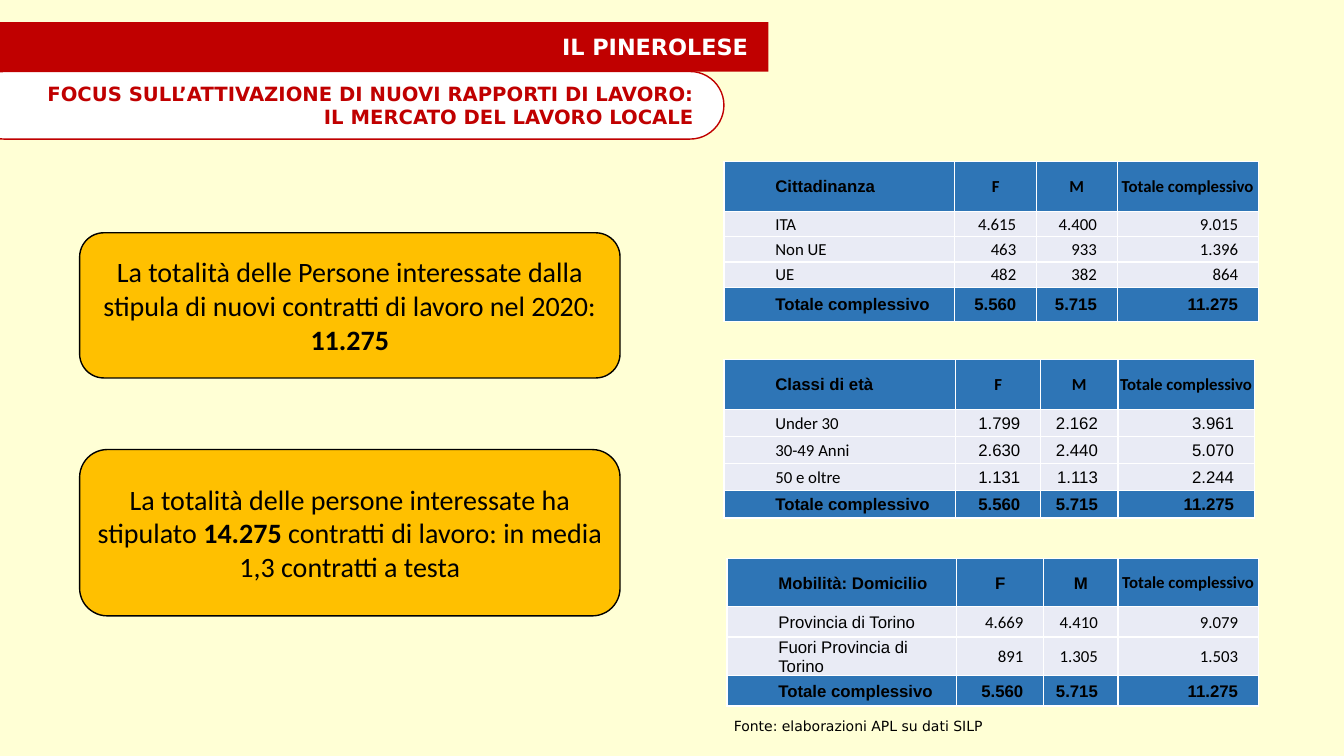
from lxml.etree import SubElement
from pptx import Presentation
from pptx.dml.color import RGBColor
from pptx.enum.shapes import MSO_SHAPE
from pptx.enum.text import MSO_ANCHOR, MSO_AUTO_SIZE, PP_ALIGN
from pptx.oxml import parse_xml
from pptx.oxml.ns import nsdecls, qn
from pptx.util import Inches, Pt

RED, WHITE, BLACK = "C00000", "FFFFFF", "000000"
AMBER, BLUE, PALE, CREAM = "FFC000", "2E75B6", "E9EBF5", "FFFFD5"
HEADING_FONT, BODY_FONT, TABLE_FONT = "DejaVu Sans", "Calibri", "Arial"


def color(value):
    return RGBColor.from_string(value)


class SlideBuilder:
    bar_margins = (0, 0, 0.2, 0)
    box_margins = (0.1, 0.05, 0.1, 0.05)
    label_margins = (0.01, 0.01, 0.01, 0)
    number_margins = (0.01, 0.01, 0.2, 0)

    def __init__(self, presentation):
        self.slide = presentation.slides.add_slide(presentation.slide_layouts[5])
        fill = self.slide.background.fill
        fill.solid()
        fill.fore_color.rgb = color(CREAM)

    def place(self, shape, position):
        for name, length in zip(("left", "top", "width", "height"), position):
            setattr(shape, name, Inches(length))

    def paint(self, shape, fill, line=None):
        shape.fill.solid()
        shape.fill.fore_color.rgb = color(fill)
        if line:
            shape.line.color.rgb = color(line)
            shape.line.width = Pt(1)
        else:
            shape.line.fill.background()

    def frame(self, text_frame, margins, anchor=MSO_ANCHOR.MIDDLE):
        left, top, right, bottom = map(Inches, margins)
        settings = {
            "word_wrap": True, "auto_size": MSO_AUTO_SIZE.NONE,
            "vertical_anchor": anchor, "margin_left": left, "margin_top": top,
            "margin_right": right, "margin_bottom": bottom,
        }
        for name, value in settings.items():
            setattr(text_frame, name, value)

    def add_text(self, paragraph, runs, alignment, font, size, ink=BLACK):
        """Fill a paragraph with (text, bold) runs."""
        paragraph.alignment = alignment
        for text, bold in runs:
            run = paragraph.add_run()
            run.text = text
            for name, value in {"name": font, "size": Pt(size), "bold": bold}.items():
                setattr(run.font, name, value)
            run.font.color.rgb = color(ink)

    def title(self, text, position):
        shape = self.slide.shapes.title
        self.place(shape, position)
        shape.element.spPr.insert(1, parse_xml(
            f'<a:prstGeom {nsdecls("a")} prst="roundRect"><a:avLst>'
            '<a:gd name="adj" fmla="val 50000"/></a:avLst></a:prstGeom>'))
        self.paint(shape, RED)
        self.frame(shape.text_frame, self.bar_margins)
        self.add_text(shape.text_frame.paragraphs[0], [(text, True)],
                      PP_ALIGN.RIGHT, HEADING_FONT, 16, WHITE)

    def rounded(self, position, fill, line, margins, rounding=None):
        shape = self.slide.shapes.add_shape(
            MSO_SHAPE.ROUNDED_RECTANGLE, *map(Inches, position))
        shape.shadow.inherit = False
        if rounding is not None:
            shape.adjustments[0] = rounding
        self.paint(shape, fill, line)
        self.frame(shape.text_frame, margins)
        return shape.text_frame

    def subtitle(self, lines, position):
        text_frame = self.rounded(position, WHITE, RED, self.bar_margins, 0.5)
        for index, line in enumerate(lines):
            paragraph = text_frame.add_paragraph() if index else text_frame.paragraphs[0]
            self.add_text(paragraph, [(line, True)], PP_ALIGN.RIGHT, HEADING_FONT, 14, RED)

    def message(self, runs, position):
        text_frame = self.rounded(position, AMBER, BLACK, self.box_margins)
        self.add_text(text_frame.paragraphs[0], runs, PP_ALIGN.CENTER, BODY_FONT, 20)

    def source(self, text, position):
        text_frame = self.slide.shapes.add_textbox(*map(Inches, position)).text_frame
        self.frame(text_frame, self.box_margins, MSO_ANCHOR.TOP)
        self.add_text(text_frame.paragraphs[0], [(text, False)],
                      PP_ALIGN.LEFT, HEADING_FONT, 10)

    def cell(self, cell, text, alignment, margins, font, bold, fill):
        cell.fill.solid()
        cell.fill.fore_color.rgb = color(fill)
        cell.vertical_anchor = MSO_ANCHOR.MIDDLE
        sides = ("margin_left", "margin_top", "margin_right", "margin_bottom")
        for name, length in zip(sides, margins):
            setattr(cell, name, Inches(length))
        paragraph = cell.text_frame.paragraphs[0]
        self.add_text(paragraph, [(text, bold)], alignment, font, 12)
        if alignment == PP_ALIGN.LEFT:
            paragraph.level = 1
            properties = paragraph._p.get_or_add_pPr()
            properties.set("marL", str(Inches(0.5)))
            properties.set("indent", "0")
        # White cell borders go ahead of the fill
        properties = cell._tc.get_or_add_tcPr()
        for index, side in enumerate(("lnL", "lnR", "lnT", "lnB")):
            border = SubElement(properties, qn(f"a:{side}"), w=str(Pt(1)))
            SubElement(SubElement(border, qn("a:solidFill")), qn("a:srgbClr"), val=WHITE)
            properties.insert(index, border)

    def table(self, left, top, widths, heights, rows, header_font, label_font, number_font):
        table = self.slide.shapes.add_table(
            len(rows), len(widths), Inches(left), Inches(top),
            Inches(sum(widths)), Inches(sum(heights))).table
        for column, width in zip(table.columns, widths):
            column.width = Inches(width)
        for row, height in zip(table.rows, heights):
            row.height = Inches(height)
        last_row, last_column = len(rows) - 1, len(widths) - 1
        for row_index, values in enumerate(rows):
            header = row_index == 0
            strong = row_index in (0, last_row)
            for column_index, text in enumerate(values):
                label = column_index == 0
                if header and column_index == last_column:
                    font = BODY_FONT
                elif header and not label:
                    font = header_font
                elif strong:
                    font = TABLE_FONT
                else:
                    font = label_font if label else number_font
                if label:
                    alignment = PP_ALIGN.LEFT
                else:
                    alignment = PP_ALIGN.CENTER if header else PP_ALIGN.RIGHT
                margins = self.label_margins if header or label else self.number_margins
                self.cell(table.cell(row_index, column_index), text, alignment,
                          margins, font, strong, BLUE if strong else PALE)


def main():
    presentation = Presentation()
    presentation.slide_width, presentation.slide_height = Inches(13.33), Inches(7.5)
    builder = SlideBuilder(presentation)

    # Heading bars and source
    builder.title("IL PINEROLESE", (-0.73, 0.22, 8.35, 0.49))
    builder.subtitle(["FOCUS SULL’ATTIVAZIONE DI NUOVI RAPPORTI DI LAVORO:",
                      "IL MERCATO DEL LAVORO LOCALE"], (-0.3, 0.71, 7.48, 0.67))
    builder.source("Fonte: elaborazioni APL su dati SILP", (7.18, 7.07, 6.97, 0.27))

    # Key messages
    builder.message([("La totalità delle Persone interessate dalla stipula di nuovi "
                      "contratti di lavoro nel 2020: ", False), ("11.275", True)],
                    (0.79, 2.31, 5.36, 1.44))
    builder.message([("La totalità delle persone interessate ha stipulato ", False),
                     ("14.275", True),
                     (" contratti di lavoro: in media 1,3 contratti a testa", False)],
                    (0.79, 4.46, 5.36, 1.65))

    # Tables by citizenship, age and residence
    columns = ["F", "M", "Totale complessivo"]
    total = ["Totale complessivo", "5.560", "5.715", "11.275"]
    citizenship = [["ITA", "4.615", "4.400", "9.015"],
                   ["Non UE", "463", "933", "1.396"],
                   ["UE", "482", "382", "864"]]
    ages = [["Under 30", "1.799", "2.162", "3.961"],
            ["30-49 Anni", "2.630", "2.440", "5.070"],
            ["50 e oltre", "1.131", "1.113", "2.244"]]
    residence = [["Provincia di Torino", "4.669", "4.410", "9.079"],
                 ["Fuori Provincia di Torino", "891", "1.305", "1.503"]]
    tables = [
        ("Cittadinanza", citizenship, 7.18, 1.6, (2.29, 0.81, 0.8, 1.4),
         (0.5, 0.25, 0.25, 0.25, 0.34), (BODY_FONT, BODY_FONT, BODY_FONT)),
        ("Classi di età", ages, 7.18, 3.57, (2.3, 0.84, 0.77, 1.35),
         (0.49, 0.27, 0.27, 0.27, 0.27), (BODY_FONT, BODY_FONT, TABLE_FONT)),
        ("Mobilità: Domicilio", residence, 7.21, 5.54, (2.28, 0.86, 0.74, 1.39),
         (0.48, 0.3, 0.3, 0.3), (TABLE_FONT, TABLE_FONT, BODY_FONT)),
    ]
    for heading, body, left, top, widths, heights, fonts in tables:
        builder.table(left, top, widths, heights, [[heading, *columns], *body, total], *fonts)

    presentation.save("out.pptx")


if __name__ == "__main__":
    main()
